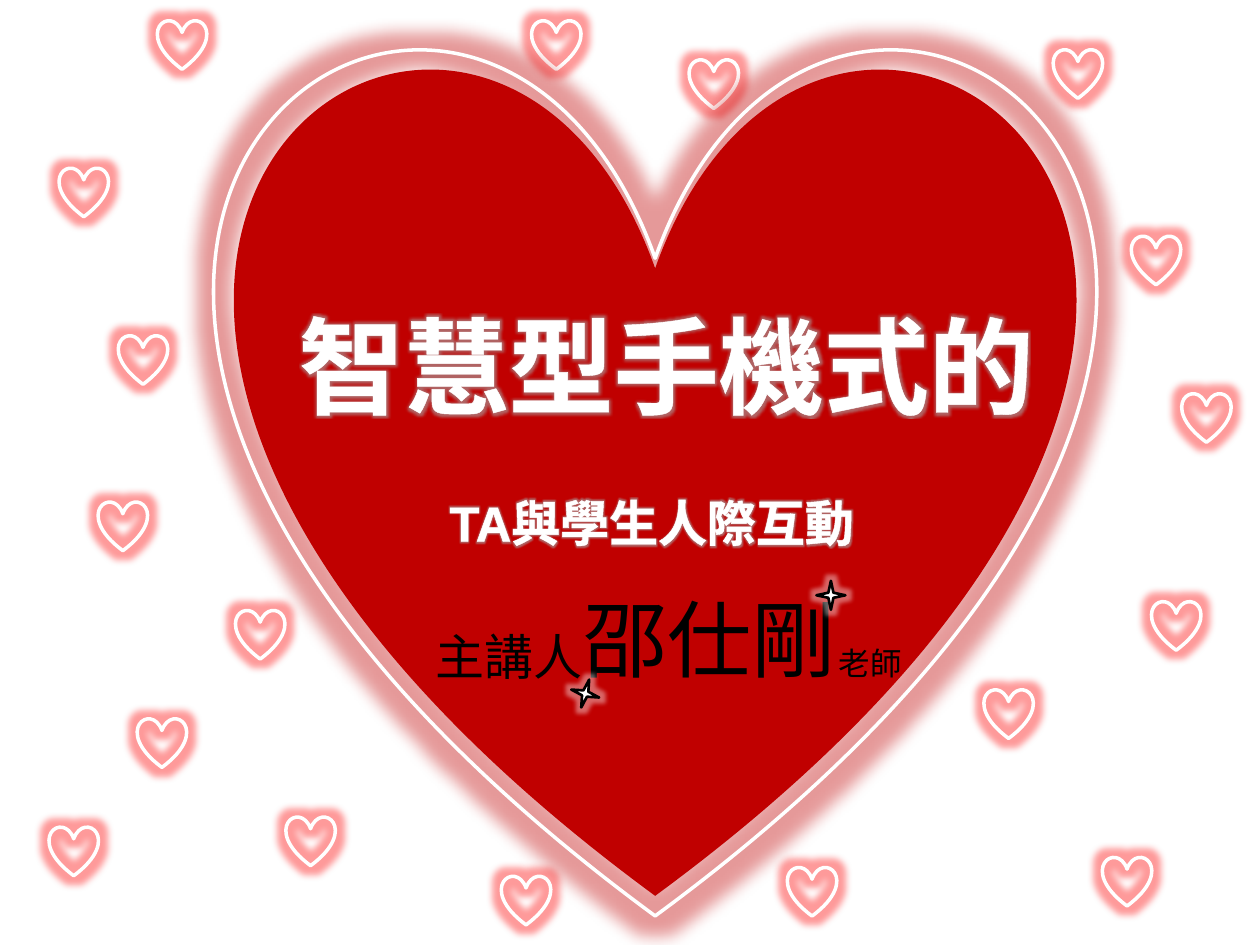
from dataclasses import dataclass

from lxml import etree
from pptx import Presentation
from pptx.dml.color import RGBColor
from pptx.enum import shapes, text
from pptx.oxml import ns
from pptx.util import Inches, Pt

LATIN, CJK = "Arial", "Noto Sans CJK SC"
WHITE, BLACK, DEEP_RED, BRIGHT_RED, GREY = "FFFFFF", "000000", "C00000", "FF0000", "A6A6A6"
SMALL_HEART, STAR = 0.39, 0.23


@dataclass
class Figure:
    preset: shapes.MSO_SHAPE
    left: float
    top: float
    size: float
    fill: str | None = None
    line: str | None = None
    weight: float = 2
    glow: tuple | None = None
    rotation: float = 0


@dataclass
class Label:
    words: str
    left: float
    top: float
    width: float
    height: float
    size: float
    wrap: bool = True
    outlined: bool = False


def color(value: str) -> RGBColor:
    return RGBColor.from_string(value)


def add_color(parent, value: str, alpha: int = 100):
    fill = etree.SubElement(parent, ns.qn("a:srgbClr"), val=value)
    if alpha < 100:
        etree.SubElement(fill, ns.qn("a:alpha"), val=str(alpha * 1000))


def add_glow(effects, value: str, radius: float, alpha: int):
    glow = etree.SubElement(effects, ns.qn("a:glow"), rad=str(Pt(radius)))
    add_color(glow, value, alpha)


def draw_figure(slide, figure: Figure):
    shape = slide.shapes.add_shape(figure.preset, Inches(figure.left), Inches(figure.top),
                                   Inches(figure.size), Inches(figure.size))
    shape.rotation = figure.rotation
    if figure.fill:
        shape.fill.solid()
        shape.fill.fore_color.rgb = color(figure.fill)
    else:
        shape.fill.background()
    if figure.line:
        shape.line.color.rgb = color(figure.line)
        shape.line.width = Pt(figure.weight)
    else:
        shape.line.fill.background()
    shape.shadow.inherit = False
    if figure.glow:
        add_glow(shape.element.spPr.find(ns.qn("a:effectLst")), *figure.glow)


def outline_run(run):
    """Give the letters a white outline and a soft grey edge."""
    properties = run.font._element
    line = etree.Element(ns.qn("a:ln"), w=str(Pt(1.42)))
    add_color(etree.SubElement(line, ns.qn("a:solidFill")), WHITE)
    properties.insert(0, line)
    effects = etree.Element(ns.qn("a:effectLst"))
    add_glow(effects, GREY, 3, 60)
    properties.find(ns.qn("a:solidFill")).addnext(effects)


def write_label(shape, label: Label):
    shape.left, shape.top = Inches(label.left), Inches(label.top)
    shape.width, shape.height = Inches(label.width), Inches(label.height)
    frame = shape.text_frame
    frame.text = label.words
    frame.word_wrap = label.wrap
    frame.auto_size = text.MSO_AUTO_SIZE.SHAPE_TO_FIT_TEXT
    frame.vertical_anchor = text.MSO_ANCHOR.TOP
    paragraph = frame.paragraphs[0]
    paragraph.alignment = text.PP_ALIGN.LEFT
    run = paragraph.runs[0]
    run.font.size = Pt(label.size)
    run.font.bold = label.outlined
    run.font.color.rgb = color(WHITE if label.outlined else BLACK)
    run.font.name = LATIN if label.outlined else CJK
    run.font._element.find(ns.qn("a:latin")).addnext(
        etree.Element(ns.qn("a:ea"), typeface=CJK))
    if label.outlined:
        outline_run(run)


TITLE = Label("智慧型手機式的", 2.27, 2.34, 6.06, 1.11, 60, outlined=True)
LABELS = [
    Label("TA與學生人際互動", 3.47, 3.86, 3.46, 0.57, 28, outlined=True),
    Label("主講人", 3.36, 4.92, 2.84, 0.57, 28),
    Label("老師", 6.56, 5.06, 0.71, 0.4, 18, wrap=False),
    Label("邵仕剛", 4.53, 4.61, 2.56, 0.91, 48, wrap=False),
]
SMALL_HEART_PLACES = [
    (0.47, 1.33), (0.94, 2.66), (9.38, 3.12), (9.14, 4.77), (1.25, 0.16), (1.09, 5.7),
    (8.75, 6.8), (5.47, 0.47), (2.27, 6.48), (3.98, 6.95), (1.87, 4.84), (8.36, 0.39),
    (4.22, 0.16), (6.25, 6.88), (7.81, 5.47), (0.78, 3.98), (8.98, 1.87), (0.39, 6.56),
]
STAR_PLACES = [(6.48, 4.61, 0), (4.53, 5.39, 16)]


def main():
    presentation = Presentation()
    presentation.slide_width, presentation.slide_height = Inches(10), Inches(7.5)
    slide = presentation.slides.add_slide(presentation.slide_layouts[5])
    heart, star = shapes.MSO_SHAPE.HEART, shapes.MSO_SHAPE.STAR_4_POINT

    draw_figure(slide, Figure(heart, 1.88, 0.47, 6.64, fill=DEEP_RED))
    for left, top in SMALL_HEART_PLACES:
        draw_figure(slide, Figure(heart, left, top, SMALL_HEART, line=WHITE,
                                  glow=(BRIGHT_RED, 8, 40)))
    draw_figure(slide, Figure(heart, 1.72, 0.31, 6.96, line=WHITE, glow=(DEEP_RED, 18, 40)))

    title = slide.shapes.title
    write_label(title, TITLE)
    title.element.getparent().append(title.element)  # bring in front of the hearts
    for label in LABELS:
        box = slide.shapes.add_textbox(0, 0, 0, 0)
        write_label(box, label)

    for left, top, rotation in STAR_PLACES:
        draw_figure(slide, Figure(star, left, top, STAR, WHITE, BLACK, 1.5,
                                  (WHITE, 5, 40), rotation))
    presentation.save("out.pptx")


if __name__ == "__main__":
    main()
